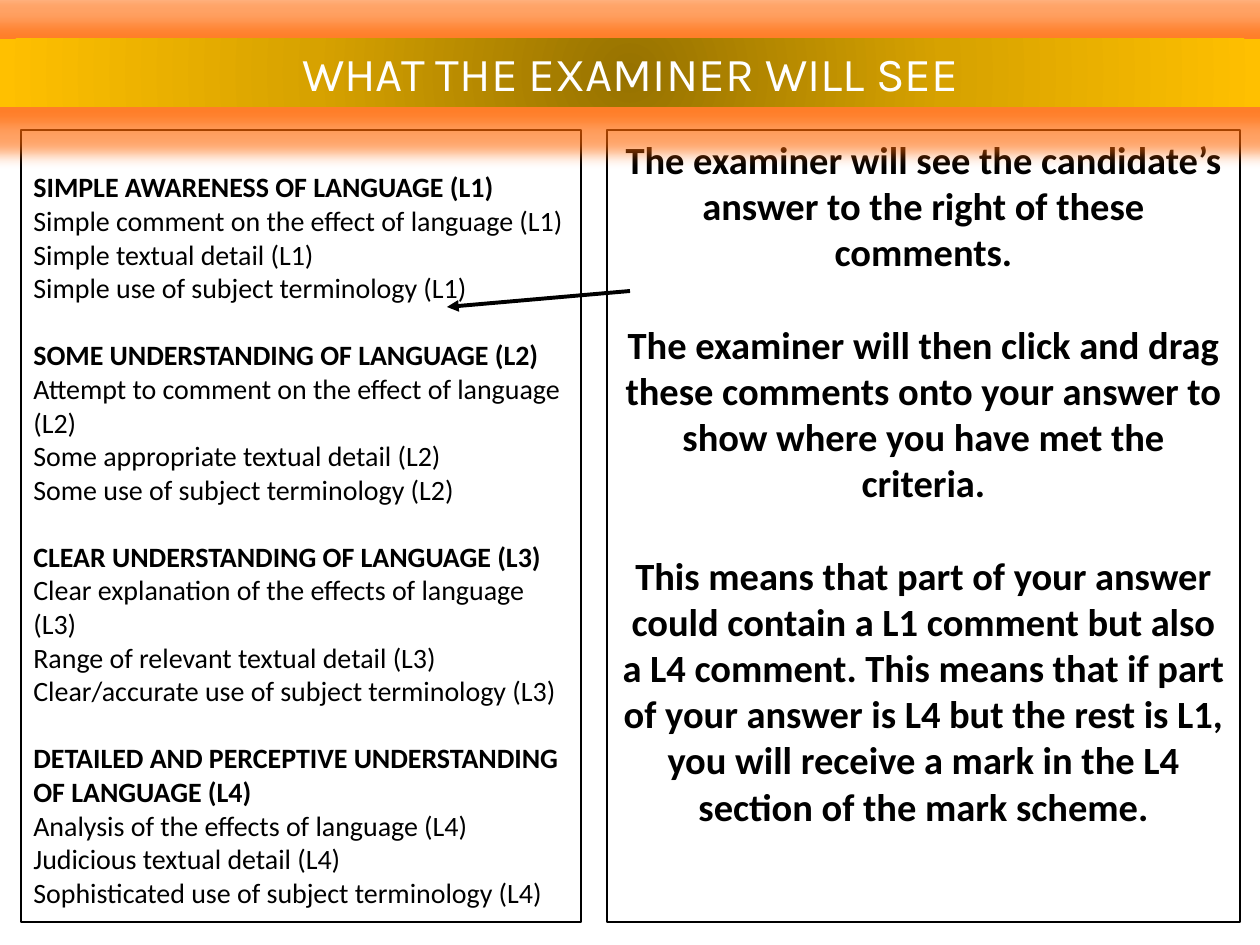
import pptx
import pptx.util
import pptx.dml.color
import pptx.enum.shapes
import pptx.enum.text
import pptx.oxml
import pptx.oxml.ns

COLOURS = {
    "ink": "000000",
    "title": "FFFFFF",
    "glow": "FF6600",
    "bar_centre": "977200",
    "bar_middle": "D7A200",
    "bar_edge": "FFC000",
}
ALIGN = pptx.enum.text.PP_ALIGN
ANCHOR = pptx.enum.text.MSO_ANCHOR
NAMESPACE = pptx.oxml.ns.nsdecls("a")

LEVELS = [
    ("SIMPLE AWARENESS OF LANGUAGE (L1)", [
        "Simple comment on the effect of language (L1)",
        "Simple textual detail (L1)",
        "Simple use of subject terminology (L1)",
    ]),
    ("SOME UNDERSTANDING OF LANGUAGE (L2)", [
        "Attempt to comment on the effect of language (L2)",
        "Some appropriate textual detail (L2)",
        "Some use of subject terminology (L2)",
    ]),
    ("CLEAR UNDERSTANDING OF LANGUAGE (L3)", [
        "Clear explanation of the effects of language (L3)",
        "Range of relevant textual detail (L3)",
        "Clear/accurate use of subject terminology (L3)",
    ]),
    ("DETAILED AND PERCEPTIVE UNDERSTANDING OF LANGUAGE (L4)", [
        "Analysis of the effects of language (L4)",
        "Judicious textual detail (L4)",
        "Sophisticated use of subject terminology (L4)",
    ]),
]
EXPLANATIONS = [
    "The examiner will see the candidate’s answer to the right of these comments.",
    "The examiner will then click and drag these comments onto your answer to "
    "show where you have met the criteria.",
    "This means that part of your answer could contain a L1 comment but also a "
    "L4 comment. This means that if part of your answer is L4 but the rest is "
    "L1, you will receive a mark in the L4 section of the mark scheme.",
]


def px(length):
    return pptx.util.Emu(round(length * 914400 / 126))


def colour(name):
    return pptx.dml.color.RGBColor.from_string(COLOURS[name])


def write(para, text, *, size, font="Calibri", ink="ink", bold=False,
          align=ALIGN.LEFT, before=0):
    para.alignment = align
    if before:
        para.space_before = pptx.util.Pt(before)
    span = para.add_run()
    span.text = text
    span.font.name = font
    span.font.size = pptx.util.Pt(size)
    span.font.bold = bold
    span.font.color.rgb = colour(ink)


class SlideBuilder:
    line_width = 0.75
    arrow_width = 2.25

    def __init__(self, page):
        self.page = page

    def rectangle(self, left, top, width, height):
        box = self.page.shapes.add_shape(
            pptx.enum.shapes.MSO_SHAPE.RECTANGLE,
            px(left), px(top), px(width), px(height))
        box.shadow.inherit = False
        box.text_frame.word_wrap = True
        return box

    def panel(self, left, top, width, height, entries, top_inset=6):
        box = self.rectangle(left, top, width, height)
        box.fill.background()
        box.line.color.rgb = colour("ink")
        box.line.width = pptx.util.Pt(self.line_width)
        frame = box.text_frame
        frame.vertical_anchor = ANCHOR.TOP
        frame.margin_top = px(top_inset)
        for index, (text, style) in enumerate(entries):
            para = frame.add_paragraph() if index else frame.paragraphs[0]
            write(para, text, **style)

    def banner(self, left, top, width, height, text):
        box = self.rectangle(left, top, width, height)
        box.line.fill.background()
        stops = "".join(
            f'<a:gs pos="{position}"><a:srgbClr val="{COLOURS[name]}"/></a:gs>'
            for position, name in
            [(0, "bar_centre"), (50000, "bar_middle"), (100000, "bar_edge")])
        gradient = pptx.oxml.parse_xml(
            f'<a:gradFill {NAMESPACE} rotWithShape="1"><a:gsLst>{stops}</a:gsLst>'
            '<a:path path="circle"><a:fillToRect l="50000" t="50000" r="50000" '
            'b="50000"/></a:path></a:gradFill>')
        properties = box._element.spPr
        properties.find(pptx.oxml.ns.qn("a:prstGeom")).addnext(gradient)
        properties.find(pptx.oxml.ns.qn("a:effectLst")).append(pptx.oxml.parse_xml(
            f'<a:glow {NAMESPACE} rad="228600"><a:srgbClr val="{COLOURS["glow"]}">'
            '<a:alpha val="60000"/></a:srgbClr></a:glow>'))
        box.text_frame.vertical_anchor = ANCHOR.MIDDLE
        write(box.text_frame.paragraphs[0], text, size=27, font="Karla",
              ink="title", align=ALIGN.CENTER)

    def arrow(self, start, end):
        line = self.page.shapes.add_connector(
            pptx.enum.shapes.MSO_CONNECTOR.STRAIGHT,
            *map(px, start), *map(px, end))
        line.line.color.rgb = colour("ink")
        line.line.width = pptx.util.Pt(self.arrow_width)
        line.line._get_or_add_ln().append(
            pptx.oxml.parse_xml(f'<a:tailEnd {NAMESPACE} type="triangle"/>'))
        line._element.spPr.append(pptx.oxml.parse_xml(f"<a:effectLst {NAMESPACE}/>"))


def main():
    deck = pptx.Presentation()
    deck.slide_width, deck.slide_height = px(1260), px(945)
    builder = SlideBuilder(deck.slides.add_slide(deck.slide_layouts[6]))

    criteria = []
    for index, (heading, details) in enumerate(LEVELS):
        criteria.append((heading, dict(size=16, bold=True, before=19.2 if index else 0)))
        criteria += [(detail, dict(size=16)) for detail in details]
    explanations = [
        (text, dict(size=22, bold=True, align=ALIGN.CENTER, before=26.4 if index else 0))
        for index, text in enumerate(EXPLANATIONS)]

    builder.panel(21, 130, 560, 792, criteria, top_inset=40)
    builder.panel(607, 130, 633, 792, explanations)
    builder.arrow((630, 291), (447, 307))
    builder.banner(0, 39, 1260, 68, "WHAT THE EXAMINER WILL SEE")
    deck.save("out.pptx")


if __name__ == "__main__":
    main()
